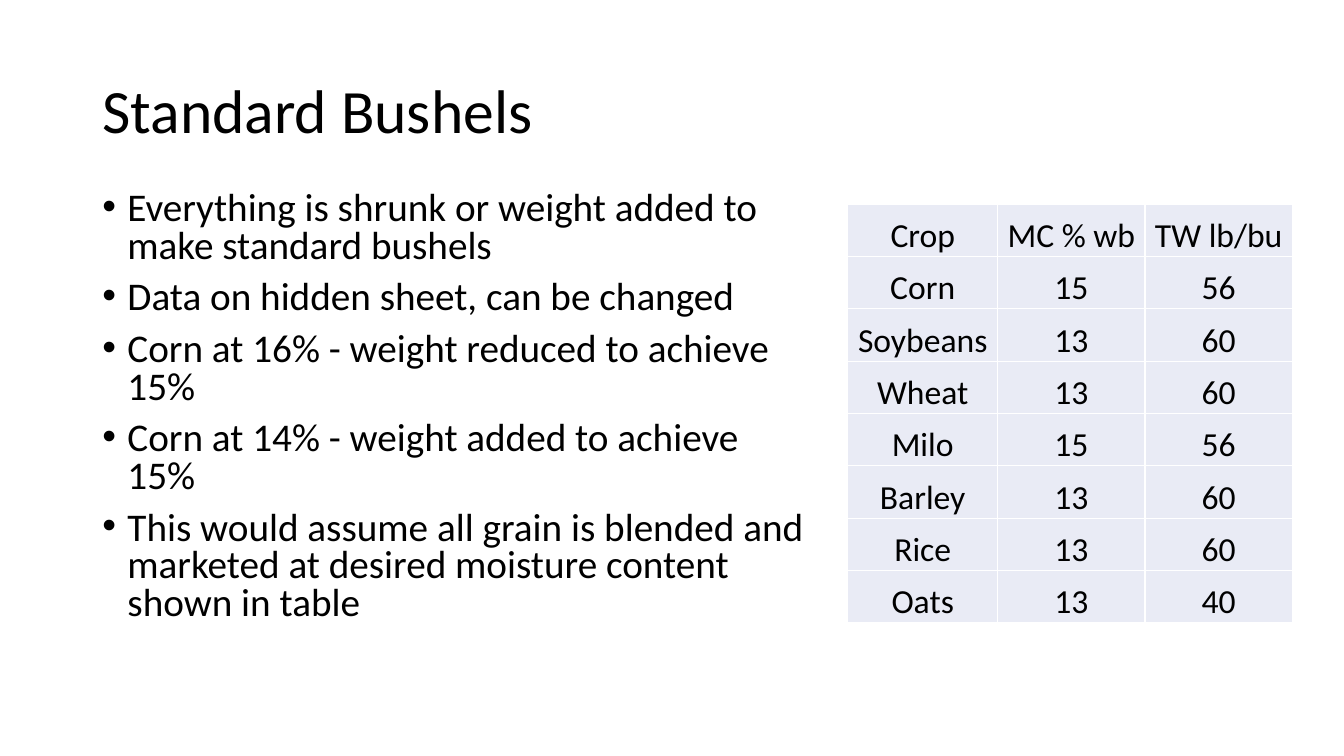
from lxml.etree import SubElement
from pptx import Presentation
from pptx.dml.color import RGBColor
from pptx.enum.text import MSO_ANCHOR as Anchor, PP_ALIGN as Align
from pptx.oxml.ns import qn
from pptx.util import Pt

BLACK = RGBColor(0x00, 0x00, 0x00)
WHITE = RGBColor(0xFF, 0xFF, 0xFF)
PALE_BLUE = RGBColor(0xE9, 0xEB, 0xF5)

POINTS = [
    "Everything is shrunk or weight added to make standard bushels",
    "Data on hidden sheet, can be changed",
    "Corn at 16% - weight reduced to achieve 15%",
    "Corn at 14% - weight added to achieve 15%",
    "This would assume all grain is blended and marketed at desired moisture content shown in table",
]
CROPS = [
    ("Crop", "MC % wb", "TW lb/bu"),
    ("Corn", "15", "56"),
    ("Soybeans", "13", "60"),
    ("Wheat", "13", "60"),
    ("Milo", "15", "56"),
    ("Barley", "13", "60"),
    ("Rice", "13", "60"),
    ("Oats", "13", "40"),
]
COLUMN_WIDTHS = [107.2, 105.2, 105.2]
ROW_HEIGHT = 37.4


def add_span(para, text, size):
    span = para.add_run()
    span.text = text
    span.font.name = "Calibri"
    span.font.size = Pt(size)
    span.font.color.rgb = BLACK


def add_borders(cell):
    props = cell._tc.get_or_add_tcPr()
    for position, side in enumerate(("a:lnL", "a:lnR", "a:lnT", "a:lnB")):
        line = SubElement(props, qn(side), w=str(Pt(1)))
        fill = SubElement(line, qn("a:solidFill"))
        SubElement(fill, qn("a:srgbClr"), val=str(WHITE))
        props.insert(position, line)


deck = Presentation()
deck.slide_width, deck.slide_height = Pt(960), Pt(540)
page = deck.slides.add_slide(deck.slide_layouts[5])

title = page.shapes.title
title.left, title.top, title.width, title.height = Pt(66), Pt(28.75), Pt(828), Pt(104.4)
title.text_frame.vertical_anchor = Anchor.MIDDLE
title.text_frame.word_wrap = True
para = title.text_frame.paragraphs[0]
para.alignment = Align.LEFT
para.line_spacing = 0.9
add_span(para, "Standard Bushels", 44)

box = page.shapes.add_textbox(Pt(66), Pt(133.2), Pt(515.5), Pt(342.7))
frame = box.text_frame
frame.word_wrap = True
for index, point in enumerate(POINTS):
    para = frame.add_paragraph() if index else frame.paragraphs[0]
    para.line_spacing = 0.8
    para.space_before = Pt(10)
    props = para._p.get_or_add_pPr()
    props.set("marL", str(Pt(18)))
    props.set("indent", str(-Pt(18)))
    SubElement(props, qn("a:buFont"), typeface="Arial")
    SubElement(props, qn("a:buChar"), char="•")
    add_span(para, point, 28)

table = page.shapes.add_table(
    len(CROPS), len(COLUMN_WIDTHS), Pt(605.5), Pt(145.8),
    Pt(sum(COLUMN_WIDTHS)), Pt(ROW_HEIGHT * len(CROPS)),
).table
for column, width in zip(table.columns, COLUMN_WIDTHS):
    column.width = Pt(width)
for row, values in zip(table.rows, CROPS):
    row.height = Pt(ROW_HEIGHT)
    for cell, value in zip(row.cells, values):
        cell.fill.solid()
        cell.fill.fore_color.rgb = PALE_BLUE
        cell.vertical_anchor = Anchor.BOTTOM
        cell.margin_left = cell.margin_right = cell.margin_top = Pt(0.75)
        cell.margin_bottom = Pt(0)
        add_borders(cell)
        para = cell.text_frame.paragraphs[0]
        para.alignment = Align.CENTER
        add_span(para, value, 24)
        para.runs[0].font.bold = False

deck.save("out.pptx")
